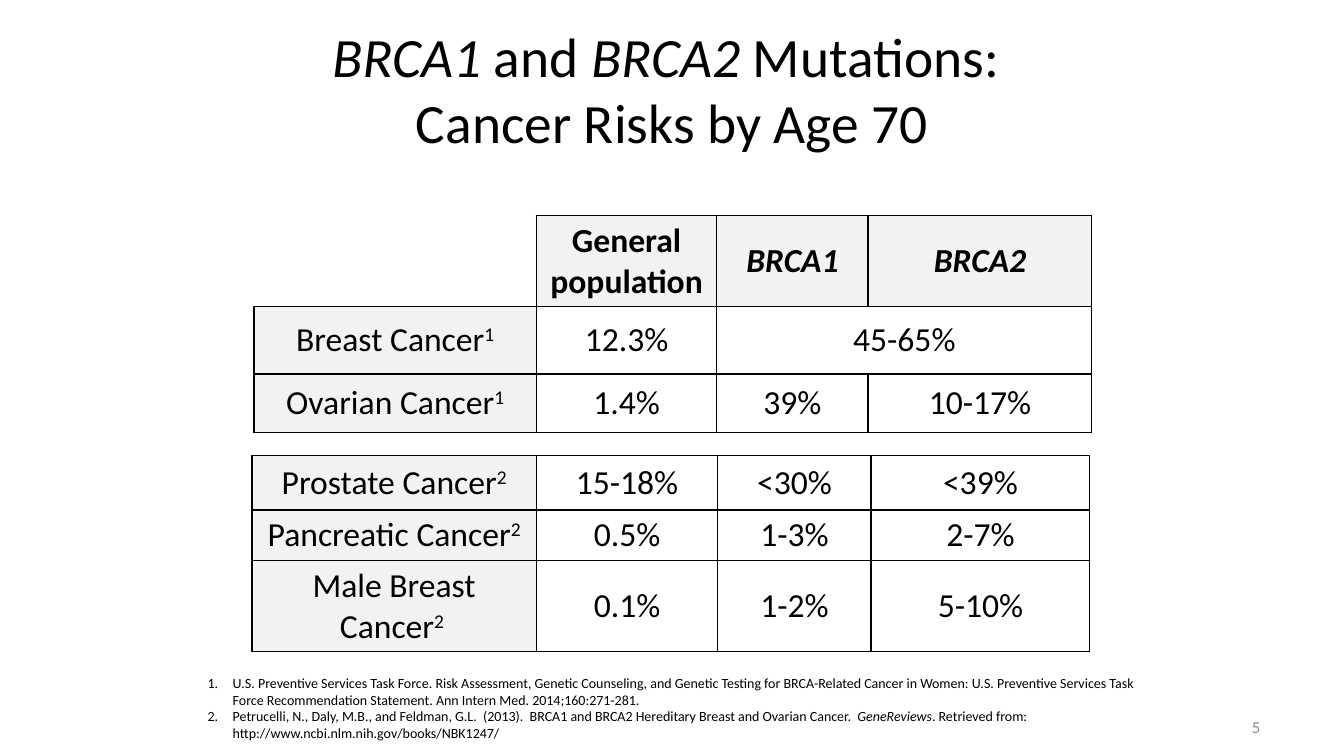
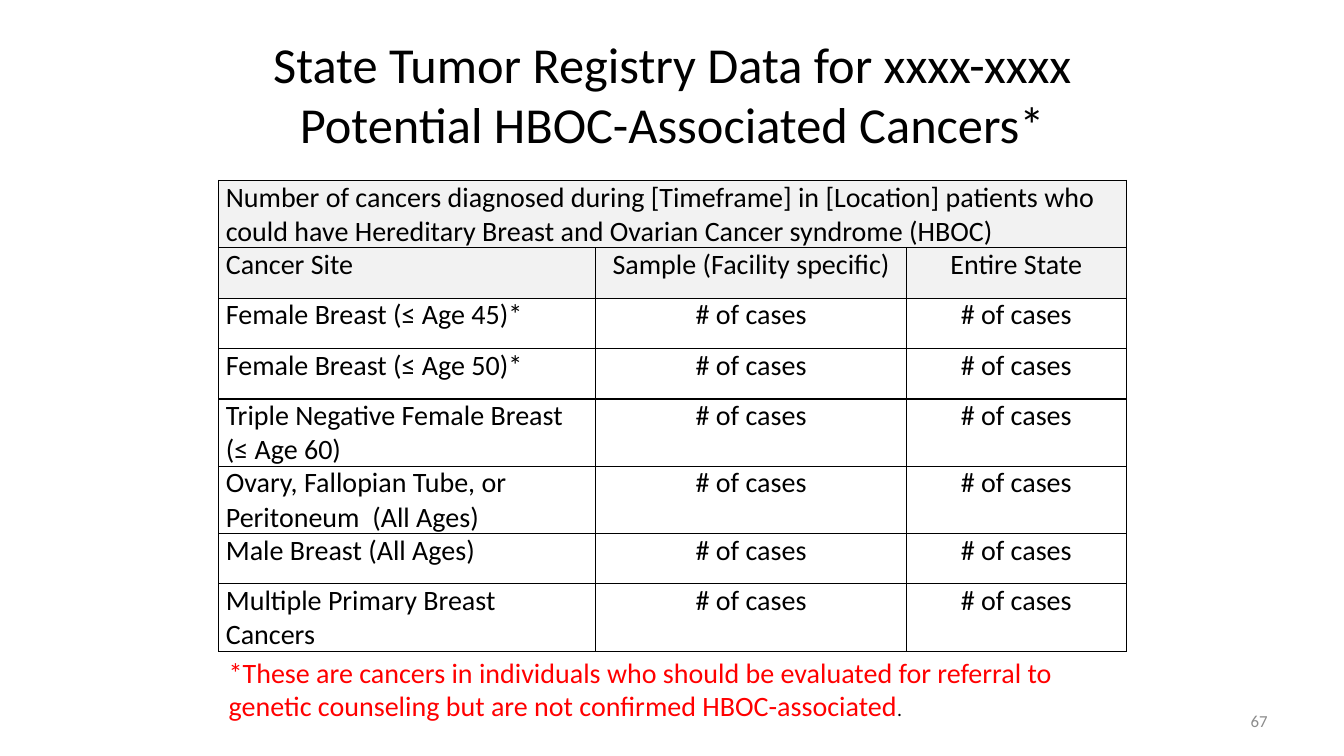
from lxml.etree import SubElement
from pptx import Presentation
from pptx.dml.color import RGBColor
from pptx.enum.text import MSO_ANCHOR, MSO_AUTO_SIZE, PP_ALIGN
from pptx.oxml.ns import qn
from pptx.util import Inches, Pt

COLORS = {"text": "000000", "label": "F2F2F2", "cell": "FFFFFF",
          "line": "000000", "number": "8C8C8C", "note": "FF0000"}
FONT = "Calibri"
LEFT, CENTER, RIGHT = PP_ALIGN.LEFT, PP_ALIGN.CENTER, PP_ALIGN.RIGHT
TOP, MIDDLE = MSO_ANCHOR.TOP, MSO_ANCHOR.MIDDLE

# Content: a paragraph is a string or a list of runs; a run is text or (text, format)
ITALIC, SUPER = {"italic": True}, {"baseline": 30}

RISK_TITLE = [
    [("BRCA1 ", ITALIC), "and ", ("BRCA2 ", ITALIC), "Mutations: "],
    "Cancer Risks by Age 70",
]
COMMON_RISKS = [
    [None, "General population", [("BRCA1", ITALIC)], [("BRCA2", ITALIC)]],
    [["Breast Cancer", ("1", SUPER)], "12.3%", "45-65%", None],
    [["Ovarian Cancer", ("1", SUPER)], "1.4%", "39%", "10-17%"],
]
OTHER_RISKS = [
    [["Prostate Cancer", ("2", SUPER)], "15-18%", "<30%", "<39%"],
    [["Pancreatic Cancer", ("2", SUPER)], "0.5%", "1-3%", "2-7%"],
    [["Male Breast Cancer", ("2 ", SUPER)], "0.1%", "1-2%", "5-10%"],
]
REFERENCES = [
    "U.S. Preventive Services Task Force. Risk Assessment, Genetic Counseling, and "
    "Genetic Testing for BRCA-Related Cancer in Women: U.S. Preventive Services Task "
    "Force Recommendation Statement. Ann Intern Med. 2014;160:271-281.",
    ["Petrucelli, N., Daly, M.B., and Feldman, G.L.  (2013).  BRCA1 and BRCA2 "
     "Hereditary Breast and Ovarian Cancer.  ", ("GeneReviews", ITALIC),
     ". Retrieved from: http://www.ncbi.nlm.nih.gov/books/NBK1247/"],
]

REGISTRY_TITLE = ["State Tumor Registry Data for xxxx-xxxx",
                  "Potential HBOC-Associated Cancers*"]
REGISTRY_HEAD = [
    ["Number of cancers diagnosed during [Timeframe] in [Location] patients who "
     "could have Hereditary Breast and Ovarian Cancer syndrome (HBOC)", None, None],
    ["Cancer Site", "Sample (Facility specific)", "Entire State"],
]
SITES = ["Female Breast (≤ Age 45)*", "Female Breast (≤ Age 50)*",
         "Triple Negative Female Breast (≤ Age 60)",
         "Ovary, Fallopian Tube, or Peritoneum  (All Ages)",
         "Male Breast (All Ages)", "Multiple Primary Breast Cancers"]
REGISTRY = REGISTRY_HEAD + [[site, "# of cases", "# of cases"] for site in SITES]
REGISTRY_NOTE = [[
    "*These are cancers in individuals who should be evaluated for referral to "
    "genetic counseling but are not confirmed HBOC-associated",
    (".", {"size": 14, "color": "text"}),
]]


# Text
def write(tf, paragraphs, align=LEFT, anchor=TOP, numbered=False, **fmt):
    tf.word_wrap = True
    tf.vertical_anchor = anchor
    for i, runs in enumerate(paragraphs):
        p = tf.paragraphs[0] if i == 0 else tf.add_paragraph()
        p.alignment = align
        if numbered:
            pPr = p._p.get_or_add_pPr()
            pPr.set("marL", str(Inches(0.25)))
            pPr.set("indent", str(-Inches(0.25)))
            SubElement(pPr, qn("a:buFont"), typeface="+mj-lt")
            SubElement(pPr, qn("a:buAutoNum"), type="arabicPeriod")
        for run in [runs] if isinstance(runs, str) else runs:
            text, own = (run, {}) if isinstance(run, str) else run
            look = {"size": 24, "color": "text", **fmt, **own}
            r = p.add_run()
            r.text = text
            r.font.name = FONT
            r.font.size = Pt(look["size"])
            r.font.color.rgb = RGBColor.from_string(COLORS[look["color"]])
            r.font.bold = look.get("bold", False)
            r.font.italic = look.get("italic", False)
            if "baseline" in look:
                r._r.get_or_add_rPr().set("baseline", str(look["baseline"] * 1000))


def add_text(s, box, paragraphs, **fmt):
    sp = s.shapes.add_textbox(*map(Inches, box))
    write(sp.text_frame, paragraphs, **fmt)


def add_slide(prs, title, box, size, number, number_box):
    s = prs.slides.add_slide(prs.slide_layouts[5])
    sp = s.shapes.title
    sp.left, sp.top, sp.width, sp.height = map(Inches, box)
    sp.text_frame.auto_size = MSO_AUTO_SIZE.NONE
    write(sp.text_frame, title, align=CENTER, anchor=MIDDLE, size=size)
    add_text(s, number_box, [number], align=RIGHT, anchor=MIDDLE,
             size=12, color="number")
    return s


# Tables
def set_borders(cell, hidden=""):
    tcPr = cell._tc.get_or_add_tcPr()
    for side in "LRTB":
        ln = SubElement(tcPr, qn(f"a:ln{side}"), w=str(Pt(1)))
        if side in hidden:
            SubElement(ln, qn("a:noFill"))
        else:
            fill = SubElement(ln, qn("a:solidFill"))
            SubElement(fill, qn("a:srgbClr"), val=COLORS["line"])


def add_grid(s, at, cols, heights, rows, head_rows=0, label_col=False,
             first_align=CENTER, anchor=MIDDLE, margins=None, bold_head=False, size=24):
    frame = s.shapes.add_table(len(rows), len(cols), *map(Inches, at),
                               Inches(sum(cols)), Inches(sum(heights)))
    table = frame.table
    table.first_row = table.horz_banding = False
    for column, width in zip(table.columns, cols):
        column.width = Inches(width)
    for row, height in zip(table.rows, heights):
        row.height = Inches(height)
    for i, row in enumerate(rows):
        for j, content in enumerate(row):
            cell = table.cell(i, j)
            corner = content is None and j == 0
            head = i < head_rows
            set_borders(cell, "LT" if corner else "")
            cell.fill.solid()
            shaded = not corner and (head or (label_col and j == 0))
            cell.fill.fore_color.rgb = RGBColor.from_string(
                COLORS["label" if shaded else "cell"])
            if margins:
                cell.margin_left = cell.margin_right = Inches(margins[0])
                cell.margin_top = cell.margin_bottom = Inches(margins[1])
            cell.vertical_anchor = anchor
            if content is not None:
                write(cell.text_frame, [content], anchor=anchor, size=size,
                      align=first_align if j == 0 else CENTER,
                      bold=head and bold_head)
        # A None after a filled cell widens that cell to the row's end
        if row[-1] is None:
            start = row.index(None) - 1
            table.cell(i, start).merge(table.cell(i, len(row) - 1))


def build_risks(prs):
    s = add_slide(prs, RISK_TITLE, (1.89, 0.25, 9.55, 1.25), 39.6,
                  "5", (10.27, 7.01, 2.33, 0.4))
    add_grid(s, (2.52, 2.14), (2.8, 1.79, 1.5, 2.22), (0.9, 0.67, 0.58),
             COMMON_RISKS, head_rows=1, label_col=True, bold_head=True)
    add_grid(s, (2.5, 4.52), (2.82, 1.8, 1.52, 2.17), (0.54, 0.5, 0.9),
             OTHER_RISKS, label_col=True)
    add_text(s, (1.96, 6.64, 9.71, 0.77), REFERENCES, numbered=True, size=10)


def build_registry(prs):
    s = add_slide(prs, REGISTRY_TITLE, (0.67, 0.3, 12, 1.25), 36,
                  "67", (9.56, 6.95, 3.11, 0.4))
    add_grid(s, (2.17, 1.79), (3.74, 3.08, 2.18), [0.5] * len(REGISTRY), REGISTRY,
             head_rows=len(REGISTRY_HEAD), first_align=LEFT, anchor=TOP,
             margins=(0.07, 0), size=20)
    add_text(s, (2.17, 6.45, 9, 0.77), REGISTRY_NOTE, size=20, color="note")


def main():
    prs = Presentation()
    prs.slide_width, prs.slide_height = Inches(13.33), Inches(7.5)
    build_risks(prs)
    build_registry(prs)
    prs.save("out.pptx")


if __name__ == "__main__":
    main()
